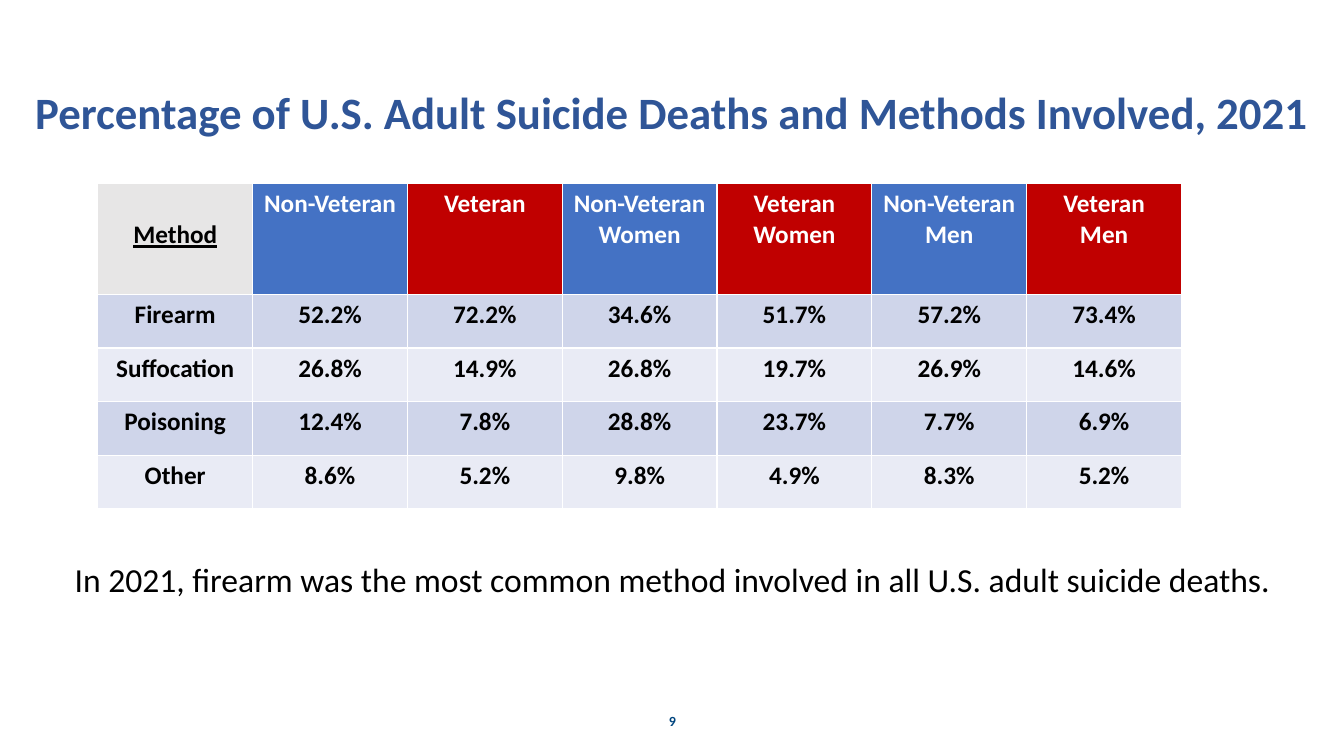
from pptx import Presentation
from pptx.dml.color import RGBColor
from pptx.enum import text
from pptx.util import Inches, Pt

TITLE_BLUE = RGBColor(0x2F, 0x55, 0x97)
NUMBER_BLUE = RGBColor(0x00, 0x46, 0x7F)
BLUE = RGBColor(0x44, 0x72, 0xC4)
RED = RGBColor(0xC0, 0x00, 0x00)
GRAY = RGBColor(0xE7, 0xE6, 0xE6)
BAND_DARK = RGBColor(0xCF, 0xD5, 0xEA)
BAND_LIGHT = RGBColor(0xE9, 0xEB, 0xF5)
BLACK = RGBColor(0x00, 0x00, 0x00)
WHITE = RGBColor(0xFF, 0xFF, 0xFF)

CENTER, LEFT = text.PP_ALIGN.CENTER, text.PP_ALIGN.LEFT
TOP, MIDDLE = text.MSO_ANCHOR.TOP, text.MSO_ANCHOR.MIDDLE

TEXTS = [
    ("9", (5.17, 6.95, 3, 0.4), 10, True, NUMBER_BLUE, CENTER, MIDDLE),
    ("In 2021, firearm was the most common method involved in all U.S. adult suicide deaths.",
     (0.25, 5.5, 12.84, 0.5), 24, False, BLACK, CENTER, TOP),
    ("Percentage of U.S. Adult Suicide Deaths and Methods Involved, 2021",
     (0.25, 0.79, 13.09, 0.64), 32, True, TITLE_BLUE, LEFT, TOP),
]
ROWS = [
    ("Method", "Non-Veteran", "Veteran", "Non-Veteran\nWomen", "Veteran Women",
     "Non-Veteran Men", "Veteran Men"),
    ("Firearm", "52.2%", "72.2%", "34.6%", "51.7%", "57.2%", "73.4%"),
    ("Suffocation", "26.8%", "14.9%", "26.8%", "19.7%", "26.9%", "14.6%"),
    ("Poisoning", "12.4%", "7.8%", "28.8%", "23.7%", "7.7%", "6.9%"),
    ("Other", "8.6%", "5.2%", "9.8%", "4.9%", "8.3%", "5.2%"),
]
TABLE_BOX = (0.97, 1.82, 10.75, 3.23)
HEADER_HEIGHT = 1.1


def style(tf, size, bold, color, align):
    for p in tf.paragraphs:
        p.alignment = align
        for r in p.runs:
            r.font.name = "Calibri"
            r.font.size = Pt(size)
            r.font.bold = bold
            r.font.color.rgb = color


def cell_fill(row, col):
    if row == 0:
        return GRAY if col == 0 else BLUE if col % 2 else RED
    return BAND_DARK if row % 2 else BAND_LIGHT


prs = Presentation()
prs.slide_width, prs.slide_height = Inches(13.33), Inches(7.5)
s = prs.slides.add_slide(prs.slide_layouts[6])

for content, box, size, bold, color, align, anchor in TEXTS:
    tf = s.shapes.add_textbox(*map(Inches, box)).text_frame
    tf.word_wrap = True
    tf.vertical_anchor = anchor
    tf.text = content
    style(tf, size, bold, color, align)

tbl = s.shapes.add_table(len(ROWS), len(ROWS[0]), *map(Inches, TABLE_BOX)).table
for column in tbl.columns:
    column.width = Inches(TABLE_BOX[2] / len(ROWS[0]))
body_height = (TABLE_BOX[3] - HEADER_HEIGHT) / (len(ROWS) - 1)

for i, row in enumerate(ROWS):
    tbl.rows[i].height = Inches(body_height if i else HEADER_HEIGHT)
    for j, value in enumerate(row):
        cell = tbl.cell(i, j)
        cell.fill.solid()
        cell.fill.fore_color.rgb = cell_fill(i, j)
        cell.text_frame.text = value
        style(cell.text_frame, 18, True, WHITE if i == 0 and j else BLACK, CENTER)

method = tbl.cell(0, 0)
method.margin_top = Inches(0.36)
method.text_frame.paragraphs[0].runs[0].font.underline = True

prs.save("out.pptx")
